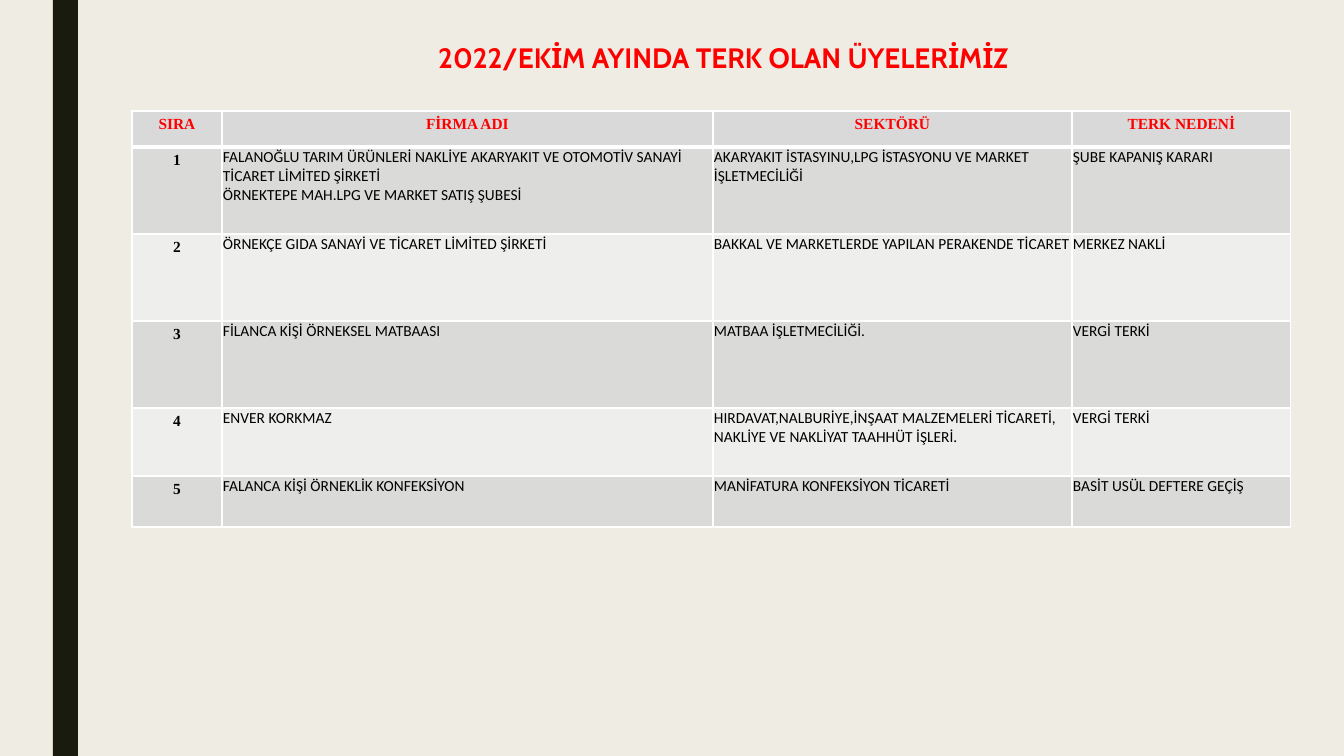
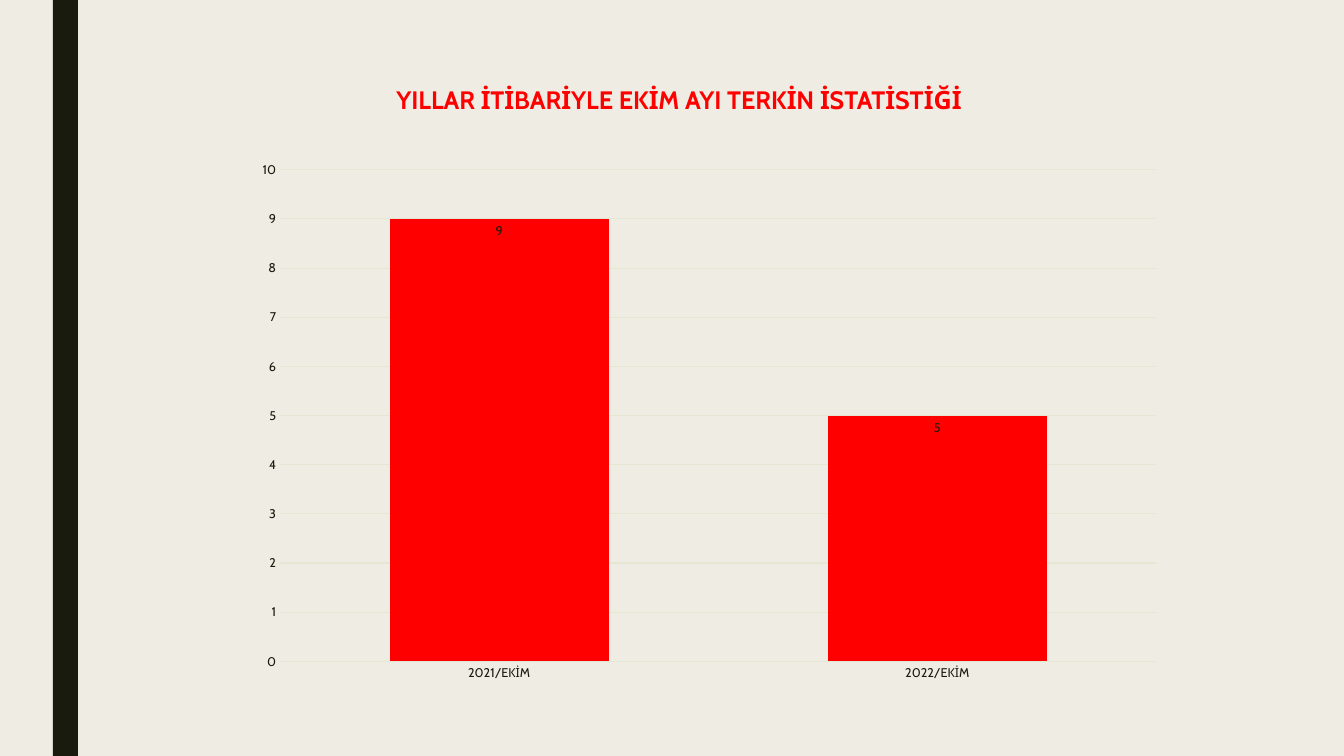
from dataclasses import dataclass

from lxml.etree import SubElement
from pptx import Presentation
from pptx.chart.data import CategoryChartData
from pptx.dml.color import RGBColor
from pptx.enum.chart import XL_CHART_TYPE as ChartType
from pptx.enum.chart import XL_LABEL_POSITION as LabelPosition
from pptx.enum.chart import XL_TICK_MARK as TickMark
from pptx.enum.shapes import MSO_SHAPE as Preset
from pptx.enum.text import MSO_ANCHOR as Anchor
from pptx.enum.text import PP_ALIGN as Align
from pptx.oxml.ns import qn
from pptx.util import Emu, Pt


@dataclass(frozen=True)
class Theme:
    """Hold the colours, fonts and type sizes of the deck."""

    background: str = "EFEDE3"
    dark: str = "191B0E"
    accent: str = "FF0000"
    black: str = "000000"
    grid: str = "E4E7D1"
    border: str = "FFFFFF"
    header_fill: str = "D9D9D9"
    row_fills: tuple = ("DADBD9", "EEEEED")
    display_font: str = "Cabin"
    heading_font: str = "Times New Roman"
    body_font: str = "Calibri"
    table_size: int = 11
    chart_size: int = 9


THEME = Theme()
SLIDE_WIDTH, SLIDE_HEIGHT = 1344, 756
EMU_PER_PX = 914400 / 100.8

COLUMN_WIDTHS = (90, 491, 359, 219)
ROW_HEIGHTS = (36, 87, 87, 87, 68, 51)
HEADINGS = ("SIRA", "FİRMA ADI", "SEKTÖRÜ", "TERK NEDENİ")
MEMBERS = (
    (
        "FALANOĞLU TARIM ÜRÜNLERİ NAKLİYE AKARYAKIT VE OTOMOTİV SANAYİ "
        "TİCARET LİMİTED ŞİRKETİ\vÖRNEKTEPE MAH.LPG VE MARKET SATIŞ ŞUBESİ",
        "AKARYAKIT İSTASYINU,LPG İSTASYONU VE MARKET İŞLETMECİLİĞİ",
        "ŞUBE KAPANIŞ KARARI",
    ),
    (
        "ÖRNEKÇE GIDA SANAYİ VE TİCARET LİMİTED ŞİRKETİ",
        "BAKKAL VE MARKETLERDE YAPILAN PERAKENDE TİCARET",
        "MERKEZ NAKLİ",
    ),
    ("FİLANCA KİŞİ ÖRNEKSEL MATBAASI", "MATBAA İŞLETMECİLİĞİ.", "VERGİ TERKİ"),
    (
        "ENVER KORKMAZ",
        "HIRDAVAT,NALBURİYE,İNŞAAT MALZEMELERİ TİCARETİ, "
        "NAKLİYE VE NAKLİYAT TAAHHÜT İŞLERİ.",
        "VERGİ TERKİ",
    ),
    (
        "FALANCA KİŞİ ÖRNEKLİK KONFEKSİYON",
        "MANİFATURA KONFEKSİYON TİCARETİ",
        "BASİT USÜL DEFTERE GEÇİŞ",
    ),
)


def px(length):
    """Turn a length in px into EMU."""
    return Emu(round(length * EMU_PER_PX))


def rgb(colour):
    """Turn a hex string into a colour."""
    return RGBColor.from_string(colour)


def style_font(font, name, size, colour, bold=False):
    """Set the face, size, colour and weight of a font."""
    font.name = name
    font.size = Pt(size)
    font.color.rgb = rgb(colour)
    font.bold = bold


def add_base_slide(presentation):
    """Add a blank slide with the shared background and side band."""
    slide = presentation.slides.add_slide(presentation.slide_layouts[6])
    slide.background.fill.solid()
    slide.background.fill.fore_color.rgb = rgb(THEME.background)
    band = slide.shapes.add_shape(Preset.RECTANGLE, px(53), 0, px(25), px(SLIDE_HEIGHT))
    band.shadow.inherit = False
    band.fill.solid()
    band.fill.fore_color.rgb = rgb(THEME.dark)
    band.line.fill.background()
    return slide


def add_title(slide, text, box, size):
    """Place a centred title in the given box."""
    text_frame = slide.shapes.add_textbox(*map(px, box)).text_frame
    text_frame.word_wrap = True
    text_frame.vertical_anchor = Anchor.TOP
    text_frame.text = text
    paragraph = text_frame.paragraphs[0]
    paragraph.alignment = Align.CENTER
    paragraph.line_spacing = 0.89
    style_font(paragraph.runs[0].font, THEME.display_font, size, THEME.accent, True)


def set_borders(cell, row_index):
    """Draw the cell borders, with a heavy rule below the header row."""
    widths = {
        "a:lnL": 1,
        "a:lnR": 1,
        "a:lnT": 3 if row_index == 1 else 1,
        "a:lnB": 3 if row_index == 0 else 1,
    }
    properties = cell._tc.get_or_add_tcPr()
    for tag, width in widths.items():
        line = SubElement(properties, qn(tag), w=str(Pt(width)))
        fill = SubElement(line, qn("a:solidFill"))
        SubElement(fill, qn("a:srgbClr"), val=THEME.border)


def fill_cell(cell, text, row_index, column_index):
    """Write and style one cell by its place in the table."""
    is_header = row_index == 0
    is_heading = is_header or column_index == 0
    set_borders(cell, row_index)
    cell.fill.solid()
    fill = THEME.header_fill if is_header else THEME.row_fills[(row_index - 1) % 2]
    cell.fill.fore_color.rgb = rgb(fill)
    cell.vertical_anchor = Anchor.TOP
    if not is_heading:
        cell.margin_left = cell.margin_top = cell.margin_right = px(1)
        cell.margin_bottom = 0
    cell.text_frame.text = text
    paragraph = cell.text_frame.paragraphs[0]
    paragraph.alignment = Align.CENTER if is_heading else Align.LEFT
    font_name = THEME.heading_font if is_heading else THEME.body_font
    colour = THEME.accent if is_header else THEME.black
    for run in paragraph.runs:
        style_font(run.font, font_name, THEME.table_size, colour, is_heading)


def add_member_table(slide, left, top):
    """Place the table of departed members at the given corner."""
    rows = [HEADINGS]
    rows += [(str(number), *member) for number, member in enumerate(MEMBERS, 1)]
    size = sum(COLUMN_WIDTHS), sum(ROW_HEIGHTS)
    frame = slide.shapes.add_table(
        len(rows), len(HEADINGS), *map(px, (left, top, *size))
    )
    table = frame.table
    table.horz_banding = False
    for column, width in zip(table.columns, COLUMN_WIDTHS):
        column.width = px(width)
    for row_index, (row, height) in enumerate(zip(table.rows, ROW_HEIGHTS)):
        row.height = px(height)
        for column_index, text in enumerate(rows[row_index]):
            fill_cell(row.cells[column_index], text, row_index, column_index)


def style_axis(axis):
    """Give an axis the shared type and no tick marks."""
    axis.major_tick_mark = axis.minor_tick_mark = TickMark.NONE
    style_font(axis.tick_labels.font, THEME.display_font, THEME.chart_size, THEME.dark)


def style_grid_line(line):
    """Give a chart line the grid colour and width."""
    line.color.rgb = rgb(THEME.grid)
    line.width = Pt(0.75)


def add_yearly_chart(slide, box):
    """Place the column chart of yearly departures in the given box."""
    data = CategoryChartData()
    data.categories = ["2021/EKİM", "2022/EKİM"]
    data.add_series("Series 1", (9, 5))
    frame = slide.shapes.add_chart(ChartType.COLUMN_CLUSTERED, *map(px, box), data)
    chart = frame.chart
    chart.has_legend = False
    chart.has_title = False
    style_font(chart.font, THEME.display_font, 10, THEME.black)

    style_axis(chart.category_axis)
    style_grid_line(chart.category_axis.format.line)
    value_axis = chart.value_axis
    style_axis(value_axis)
    value_axis.minimum_scale, value_axis.maximum_scale = 0, 10
    value_axis.major_unit = 1
    value_axis.format.line.fill.background()
    style_grid_line(value_axis.major_gridlines.format.line)

    plot = chart.plots[0]
    plot.vary_by_categories = False
    plot.gap_width = 100
    plot.overlap = -24
    series = plot.series[0]
    series.format.fill.solid()
    series.format.fill.fore_color.rgb = rgb(THEME.accent)
    labels = series.data_labels
    labels.show_value = True
    labels.position = LabelPosition.INSIDE_END
    style_font(labels.font, THEME.display_font, THEME.chart_size, THEME.dark)


def build_member_slide(presentation):
    """Build the slide that lists the departed members."""
    slide = add_base_slide(presentation)
    add_title(slide, "2022/EKİM AYINDA TERK OLAN ÜYELERİMİZ", (328, 40, 791, 61), 20)
    add_member_table(slide, 132, 111)


def build_statistics_slide(presentation):
    """Build the slide that compares departures by year."""
    slide = add_base_slide(presentation)
    title = "YILLAR İTİBARİYLE EKİM AYI TERKİN İSTATİSTİĞİ"
    add_title(slide, title, (371, 83, 616, 38), 18)
    add_yearly_chart(slide, (244, 151, 931, 541))


def main():
    """Build and save the presentation."""
    presentation = Presentation()
    presentation.slide_width = px(SLIDE_WIDTH)
    presentation.slide_height = px(SLIDE_HEIGHT)
    build_member_slide(presentation)
    build_statistics_slide(presentation)
    presentation.save("out.pptx")


if __name__ == "__main__":
    main()
